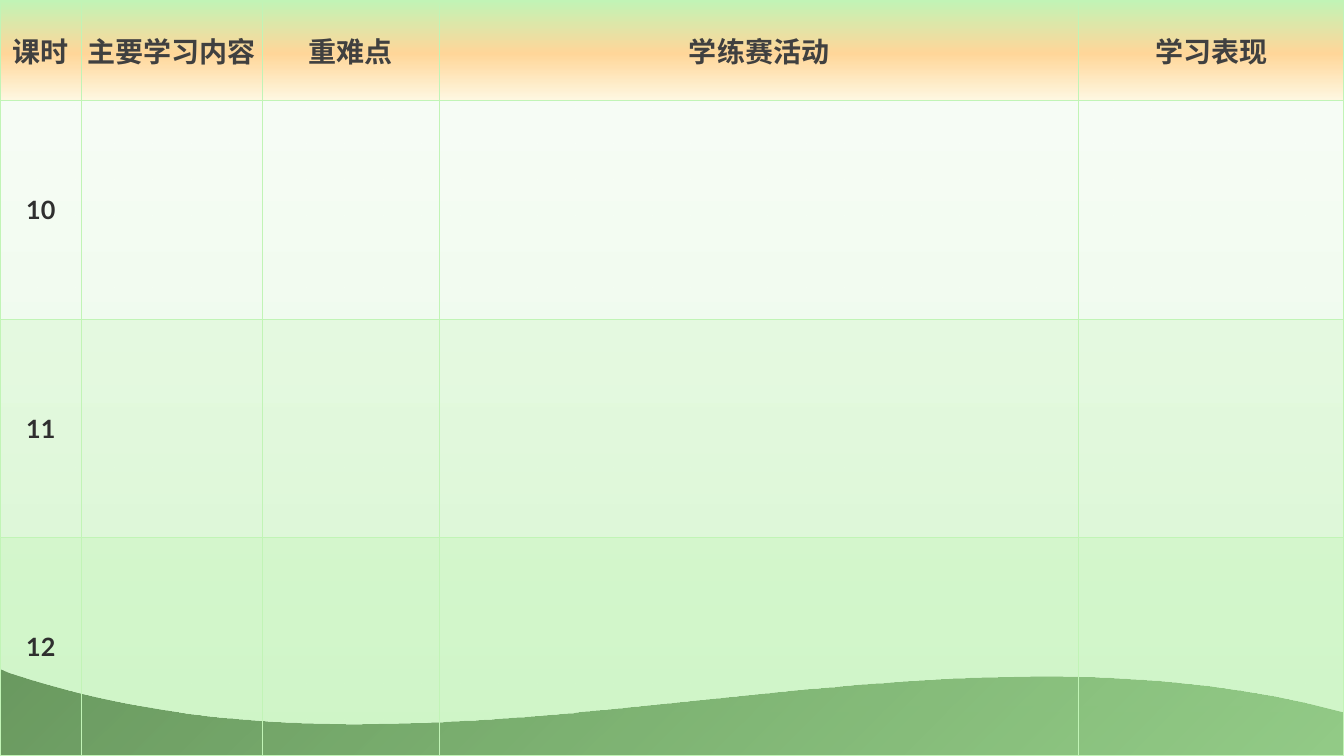
"""Build the lesson plan slide: a timetable for periods 10 to 12 over green hills."""
from dataclasses import dataclass

from lxml import etree
from pptx import Presentation
from pptx.dml.color import RGBColor
from pptx.enum.shapes import MSO_SHAPE
from pptx.enum.text import MSO_ANCHOR, PP_ALIGN
from pptx.oxml.ns import qn
from pptx.util import Inches, Pt

RECTANGLE = MSO_SHAPE.RECTANGLE
CENTER = PP_ALIGN.CENTER
MIDDLE = MSO_ANCHOR.MIDDLE


@dataclass(frozen=True)
class Theme:
    font: str = "Lato"
    heading_size: int = 20
    period_size: int = 18
    heading_color: str = "404040"
    period_color: str = "2F2F2F"
    mint: str = "C1F4B6"
    backdrop: tuple = ((48, "FFFFFF", 100), (100, "E0F9DB", 100))
    veil: tuple = ((0, "F9FEF8", 80), (100, "E0F9DB", 78))
    hill: tuple = ((0, "133F0A", 100), (100, "237312", 65))
    heading: tuple = ((0, "C1F4B6", 100), (53, "FFD699", 100), (100, "FEF8E2", 100))


THEME = Theme()


def set_gradient(fill, element, stops, angle):
    """Give a fill inside element a linear gradient, with the angle clockwise."""
    fill.gradient()
    fill.gradient_angle = (360 - angle) % 360
    stop_list = next(element.iter(qn("a:gsLst")))
    for old_stop in list(stop_list):
        stop_list.remove(old_stop)
    for position, color, opacity in stops:
        stop = etree.SubElement(stop_list, qn("a:gs"), pos=str(position * 1000))
        tint = etree.SubElement(stop, qn("a:srgbClr"), val=color)
        if opacity < 100:
            etree.SubElement(tint, qn("a:alpha"), val=str(opacity * 1000))


def write_text(cell, text, size, color, inset):
    """Write bold centred text into a table cell."""
    cell.vertical_anchor = MIDDLE
    cell.margin_left = cell.margin_right = Inches(inset)
    cell.margin_top = cell.margin_bottom = Inches(inset)
    paragraph = cell.text_frame.paragraphs[0]
    paragraph.alignment = CENTER
    run = paragraph.add_run()
    run.text = text
    run.font.name = THEME.font
    run.font.size = Pt(size)
    run.font.bold = True
    run.font.color.rgb = RGBColor.from_string(color)


WIDTH, HEIGHT = 13.33, 7.5
deck = Presentation()
deck.slide_width, deck.slide_height = Inches(WIDTH), Inches(HEIGHT)
slide = deck.slides.add_slide(deck.slide_layouts[6])
set_gradient(slide.background.fill, slide.element, THEME.backdrop, 90)

veil = slide.shapes.add_shape(RECTANGLE, 0, 0, Inches(WIDTH), Inches(HEIGHT))
set_gradient(veil.fill, veil.element, THEME.veil, 90)

CREST = ((0.09, 6.67), (4.29, 8.08), (8.7, 6.02), (12.93, 6.97))
CREST_STEPS = 80
hill_outline = []
for step in range(CREST_STEPS + 1):
    t = step / CREST_STEPS
    weights = ((1 - t) ** 3, 3 * t * (1 - t) ** 2, 3 * t**2 * (1 - t), t**3)
    hill_outline.append([
        sum(weight * point[axis] for weight, point in zip(weights, CREST))
        for axis in (0, 1)
    ])
hill_outline += [(WIDTH, 7.07), (WIDTH, HEIGHT), (0, HEIGHT)]
hill_builder = slide.shapes.build_freeform(0, Inches(6.63))
hill_builder.add_line_segments([(Inches(x), Inches(y)) for x, y in hill_outline])
hill = hill_builder.convert_to_shape()
set_gradient(hill.fill, hill.element, THEME.hill, 45)

for scenery in (veil, hill):
    scenery.line.fill.background()
    scenery.shadow.inherit = False

HEADINGS = ("课时", "主要学习内容", "重难点", "学练赛活动", "学习表现")
COLUMN_WIDTHS = (0.81, 1.79, 1.76, 6.34, 2.63)
PERIODS = ("10", "11", "12")
PERIOD_OPACITY = (0, 25, 50)
HEADING_HEIGHT = 1
period_height = (HEIGHT - HEADING_HEIGHT) / len(PERIODS)

plan = slide.shapes.add_table(
    len(PERIODS) + 1, len(HEADINGS), 0, 0, Inches(WIDTH), Inches(HEIGHT)
).table
plan.first_row = plan.horz_banding = False
for column, width in zip(plan.columns, COLUMN_WIDTHS):
    column.width = Inches(width)
for index, row in enumerate(plan.rows):
    row.height = Inches(period_height if index else HEADING_HEIGHT)

for column, heading in enumerate(HEADINGS):
    heading_cell = plan.cell(0, column)
    set_gradient(heading_cell.fill, heading_cell._tc, THEME.heading, 90)
    write_text(heading_cell, heading, size=THEME.heading_size,
               color=THEME.heading_color, inset=0.04)

for row, (period, opacity) in enumerate(zip(PERIODS, PERIOD_OPACITY), start=1):
    write_text(plan.cell(row, 0), period, size=THEME.period_size,
               color=THEME.period_color, inset=0.1)
    for column in range(len(HEADINGS)):
        cell = plan.cell(row, column)
        if not opacity:
            cell.fill.background()
            continue
        cell.fill.solid()
        cell.fill.fore_color.rgb = RGBColor.from_string(THEME.mint)
        tint = next(cell._tc.iter(qn("a:srgbClr"))) if column else \
            cell._tc.tcPr.find(qn("a:solidFill"))[0]
        etree.SubElement(tint, qn("a:alpha"), val=str(opacity * 1000))

for cell in plan.iter_cells():
    cell_format = cell._tc.get_or_add_tcPr()
    for position, side in enumerate(("a:lnL", "a:lnR", "a:lnT", "a:lnB")):
        border = etree.Element(qn(side), w=str(Pt(1)))
        border_fill = etree.SubElement(border, qn("a:solidFill"))
        etree.SubElement(border_fill, qn("a:srgbClr"), val=THEME.mint)
        cell_format.insert(position, border)

deck.save("out.pptx")
